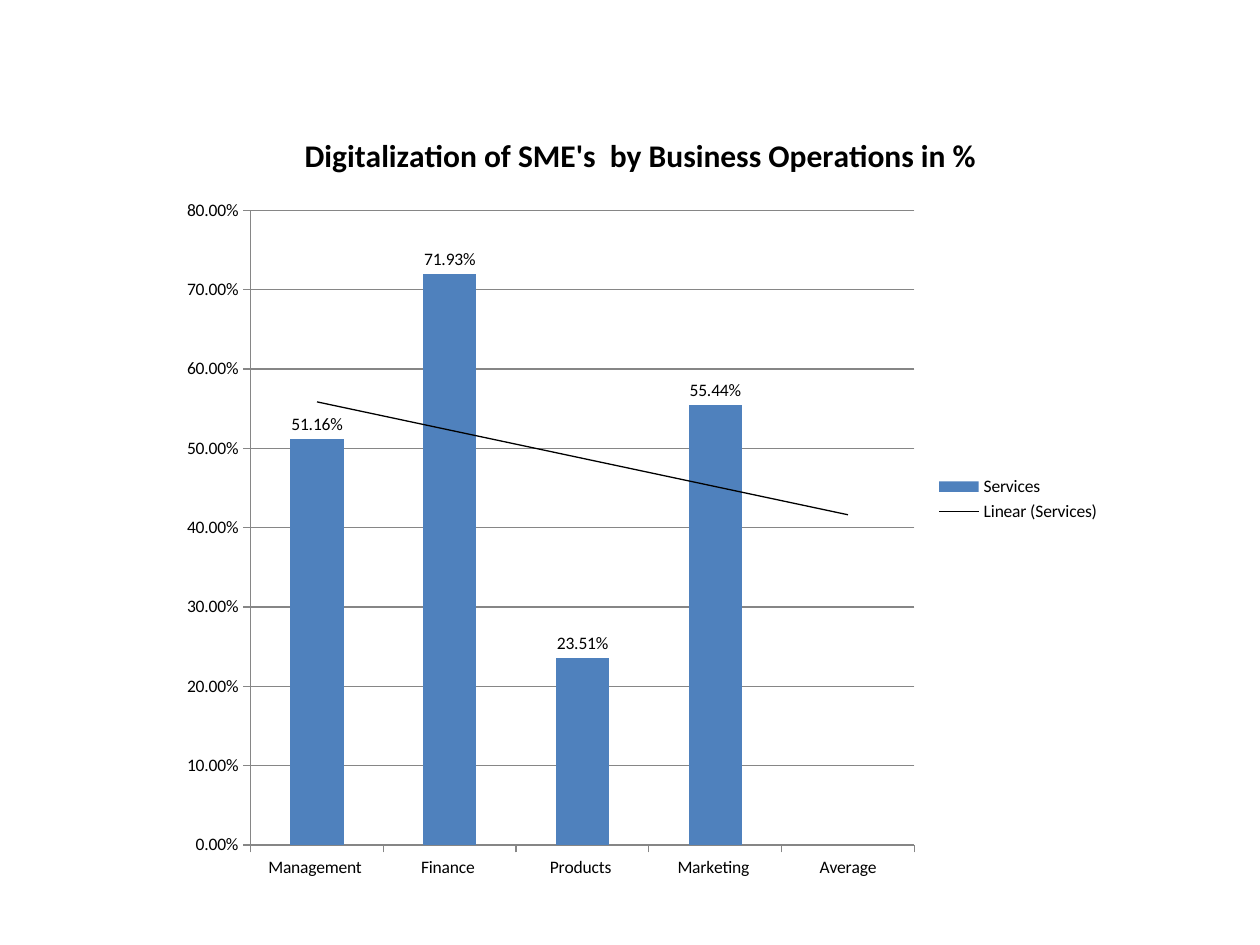
from dataclasses import dataclass

from lxml import etree
from pptx import Presentation
from pptx.chart import data as cd
from pptx.dml.color import RGBColor
from pptx.enum import chart as ce
from pptx.oxml import ns
from pptx.util import Cm, Pt


@dataclass(frozen=True)
class Theme:
    font: str = "Calibri"
    ink: RGBColor = RGBColor(0, 0, 0)
    bar: RGBColor = RGBColor(0x4F, 0x81, 0xBD)
    grid: RGBColor = RGBColor(0x86, 0x86, 0x86)
    head: Pt = Pt(18)
    body: Pt = Pt(10)
    thin: Pt = Pt(0.75)


THEME = Theme()
TITLE = " Digitalization of SME's  by Business Operations in % "
SHARES = {
    "Management ": 0.5116,
    "Finance ": 0.7193,
    "Products ": 0.2351,
    "Marketing ": 0.5544,
    "Average": None,
}
PERCENT = "0.00%"


def set_font(font, size, bold=False):
    font.name, font.size, font.bold = THEME.font, size, bold
    font.color.rgb = THEME.ink


def set_line(line, color):
    line.color.rgb = color
    line.width = THEME.thin


def add_trend(series):
    """Add a linear trend line, which must stand before the categories."""
    trend = etree.Element(ns.qn("c:trendline"))
    props = etree.SubElement(trend, ns.qn("c:spPr"))
    line = etree.SubElement(props, ns.qn("a:ln"), w=str(THEME.thin))
    fill = etree.SubElement(line, ns.qn("a:solidFill"))
    etree.SubElement(fill, ns.qn("a:srgbClr"), val=str(THEME.ink))
    for tag, val in (("trendlineType", "linear"), ("dispRSqr", "0"), ("dispEq", "0")):
        etree.SubElement(trend, ns.qn(f"c:{tag}"), val=val)
    series._element.find(ns.qn("c:cat")).addprevious(trend)


def style_axes(chart):
    for axis in (chart.category_axis, chart.value_axis):
        axis.major_tick_mark = ce.XL_TICK_MARK.OUTSIDE
        axis.minor_tick_mark = ce.XL_TICK_MARK.NONE
        set_line(axis.format.line, THEME.grid)
        set_font(axis.tick_labels.font, THEME.body)
    chart.category_axis.has_major_gridlines = False
    value = chart.value_axis
    value.minimum_scale, value.maximum_scale, value.major_unit = 0, 0.8, 0.1
    value.has_major_gridlines = True
    set_line(value.major_gridlines.format.line, THEME.grid)
    value.tick_labels.number_format = PERCENT
    value.tick_labels.number_format_is_linked = False


def style_bars(plot):
    plot.gap_width = 150
    plot.vary_by_categories = False
    series = plot.series[0]
    series.format.fill.solid()
    series.format.fill.fore_color.rgb = THEME.bar
    labels = series.data_labels
    labels.show_value = True
    labels.number_format = PERCENT
    labels.number_format_is_linked = False
    labels.position = ce.XL_LABEL_POSITION.OUTSIDE_END
    set_font(labels.font, THEME.body)
    add_trend(series)


def add_shares(slide, left, top, width, height):
    """Column chart of digitalization by business operation."""
    data = cd.CategoryChartData(number_format=PERCENT)
    data.categories = list(SHARES)
    data.add_series("Services", list(SHARES.values()))
    chart = slide.shapes.add_chart(
        ce.XL_CHART_TYPE.COLUMN_CLUSTERED, left, top, width, height, data
    ).chart
    set_font(chart.font, THEME.body)

    # Title and legend
    chart.has_title = True
    para = chart.chart_title.text_frame.paragraphs[0]
    para.text = TITLE
    set_font(para.font, THEME.head, bold=True)
    chart.chart_title.include_in_layout = False
    chart.has_legend = True
    chart.legend.position = ce.XL_LEGEND_POSITION.RIGHT
    chart.legend.include_in_layout = False
    set_font(chart.legend.font, THEME.body)

    style_axes(chart)
    style_bars(chart.plots[0])


def main():
    deck = Presentation()
    deck.slide_width, deck.slide_height = Cm(25.4), Cm(19.05)
    slide = deck.slides.add_slide(deck.slide_layouts[6])
    add_shares(slide, Cm(3.39), Cm(2.12), Cm(19.05), Cm(15.88))
    deck.save("out.pptx")


if __name__ == "__main__":
    main()
